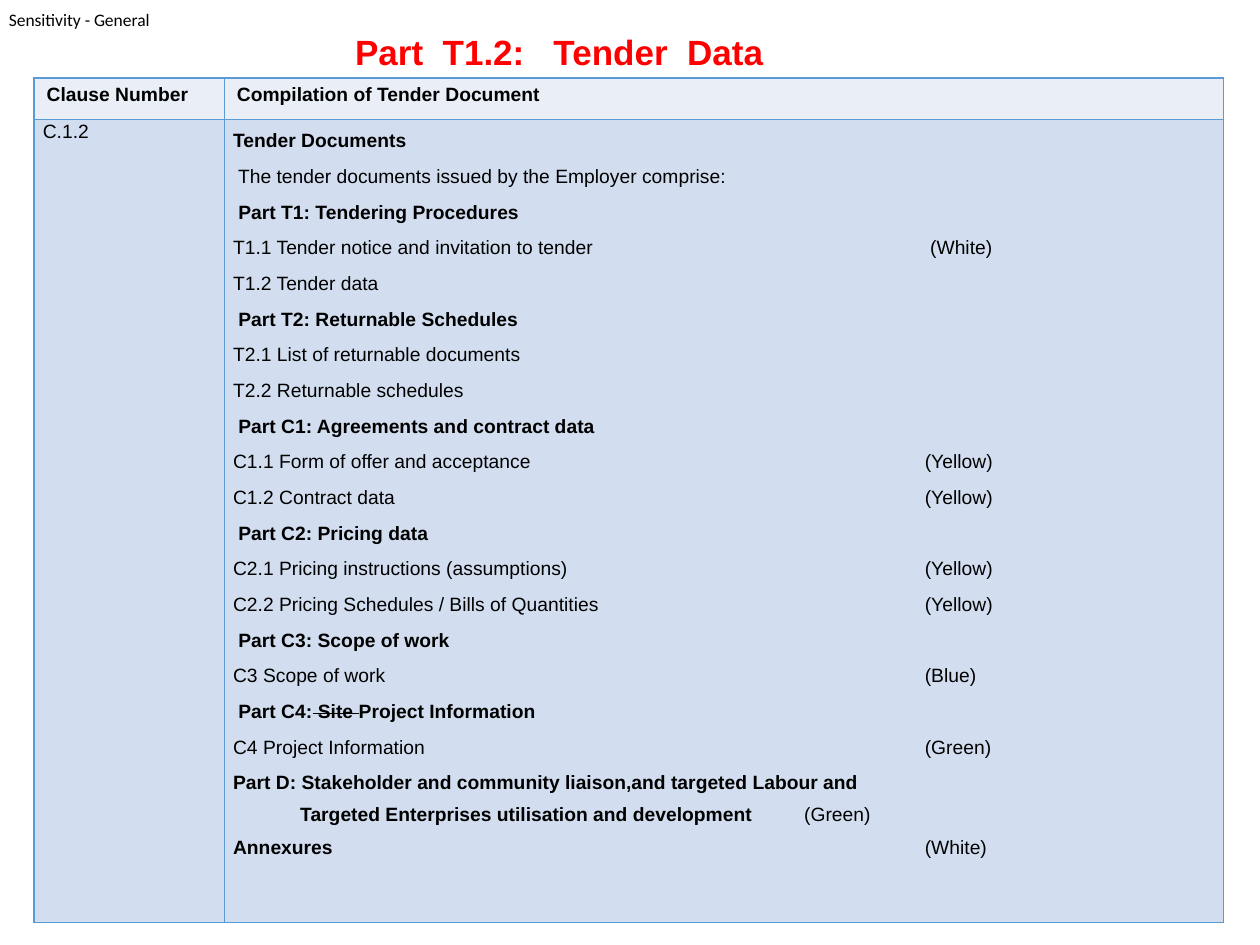
from lxml.etree import SubElement
from pptx import Presentation
from pptx.dml.color import RGBColor
from pptx.enum.text import MSO_ANCHOR, MSO_AUTO_SIZE, PP_ALIGN
from pptx.oxml.ns import qn
from pptx.util import Inches, Pt

COLORS = {
    "text": "000000",
    "title": "FF0000",
    "border": "5B9BD5",
    "header": "EAEFF7",
    "body": "D2DEEF",
}
TAB_POSITION = Inches(5.49)
HEADERS = ["Clause Number", "Compilation of Tender Document"]
HEADING, ITEM = True, False
DOCUMENTS = [
    (HEADING, "Tender Documents"),
    (ITEM, " The tender documents issued by the Employer comprise:"),
    (HEADING, " Part T1: Tendering Procedures"),
    (ITEM, "T1.1 Tender notice and invitation to tender", " (White)"),
    (ITEM, "T1.2 Tender data"),
    (HEADING, " Part T2: Returnable Schedules"),
    (ITEM, "T2.1 List of returnable documents"),
    (ITEM, "T2.2 Returnable schedules"),
    (HEADING, " Part C1: Agreements and contract data"),
    (ITEM, "C1.1 Form of offer and acceptance", "(Yellow)"),
    (ITEM, "C1.2 Contract data", "(Yellow)"),
    (HEADING, " Part C2: Pricing data"),
    (ITEM, "C2.1 Pricing instructions (assumptions)", "(Yellow)"),
    (ITEM, "C2.2 Pricing Schedules / Bills of Quantities", "(Yellow)"),
    (HEADING, " Part C3: Scope of work"),
    (ITEM, "C3 Scope of work", "(Blue)"),
    (HEADING, " Part C4:~ Site ~Project Information"),
    (ITEM, "C4 Project Information", "(Green)"),
    (HEADING, "Part D: Stakeholder and community liaison,and targeted Labour and\v"
              " Targeted Enterprises utilisation and development", " (Green)"),
    (HEADING, "Annexures", "(White)"),
]


def format_font(font, size, bold=False, color="text", name="Arial"):
    """Set the typeface, size, weight and colour of a font."""
    font.name = name
    font.size = Pt(size)
    font.bold = bold
    font.color.rgb = RGBColor.from_string(COLORS[color])


def add_text_run(paragraph, text, bold=False):
    """Append a formatted table run and return it."""
    paragraph.add_line_break() if text == "\v" else None
    run = paragraph.add_run()
    run.text = text
    format_font(run.font, 11, bold)
    return run


def add_sensitivity_label(slide, left, top, width, height):
    """Add the small classification label."""
    frame = slide.shapes.add_textbox(left, top, width, height).text_frame
    frame.margin_left = frame.margin_right = frame.margin_top = frame.margin_bottom = 0
    frame.text = "Sensitivity - General"
    format_font(frame.paragraphs[0].runs[0].font, 10, name="Calibri")


def add_title(slide, left, top, width, height):
    """Place and format the title placeholder."""
    title = slide.shapes.title
    title.left, title.top, title.width, title.height = left, top, width, height
    frame = title.text_frame
    frame.text = "Part  T1.2:   Tender  Data"
    frame.word_wrap = False
    frame.auto_size = MSO_AUTO_SIZE.NONE
    frame.vertical_anchor = MSO_ANCHOR.TOP
    paragraph = frame.paragraphs[0]
    paragraph.alignment = PP_ALIGN.CENTER
    format_font(paragraph.runs[0].font, 20, True, "title")


def style_cell(cell, color):
    """Give a cell its four borders and its fill."""
    properties = cell._tc.get_or_add_tcPr()
    for side in ("lnL", "lnR", "lnT", "lnB"):
        line = SubElement(properties, qn(f"a:{side}"), w=str(Pt(1)))
        fill = SubElement(line, qn("a:solidFill"))
        SubElement(fill, qn("a:srgbClr"), val=COLORS["border"])
    cell.fill.solid()
    cell.fill.fore_color.rgb = RGBColor.from_string(COLORS[color])


def add_document_line(paragraph, is_heading, label, paper=None):
    """Write one document entry, with its paper colour after a tab."""
    paragraph.line_spacing = 1.5
    paragraph.space_after = Pt(2)
    properties = paragraph._p.get_or_add_pPr()
    if paper:
        tabs = SubElement(properties, qn("a:tabLst"))
        SubElement(tabs, qn("a:tab"), pos=str(TAB_POSITION), algn="l")
    if "\v" in label:
        paragraph.space_after = Pt(0)
        properties.set("marL", str(Inches(0.49)))
        properties.set("indent", str(Inches(-0.49)))
    for index, part in enumerate(label.split("~")):
        for line_number, text in enumerate(part.split("\v")):
            if line_number:
                paragraph.add_line_break()
            run = add_text_run(paragraph, text, is_heading)
            if index == 1:
                run._r.get_or_add_rPr().set("strike", "sngStrike")
    if paper:
        add_text_run(paragraph, f"\t{paper}")
    for line_break in paragraph._p.findall(qn("a:br")):
        SubElement(line_break, qn("a:rPr"), sz="1100", b="1")


def add_tender_table(slide, left, top, width, height):
    """Add the clause table with its header and document list."""
    table = slide.shapes.add_table(2, 2, left, top, width, height).table
    table.columns[0].width = Inches(1.51)
    table.columns[1].width = width - Inches(1.51)
    table.rows[0].height = Inches(0.33)
    table.rows[1].height = height - Inches(0.33)
    for column, header in enumerate(HEADERS):
        cell = table.cell(0, column)
        style_cell(cell, "header")
        add_text_run(cell.text_frame.paragraphs[0], header, True)
        cell = table.cell(1, column)
        style_cell(cell, "body")
        cell.margin_left = cell.margin_right = Inches(0.07)
        cell.margin_top = cell.margin_bottom = 0
    clause = table.cell(1, 0).text_frame.paragraphs[0]
    clause.line_spacing = 1.07
    clause.space_after = Pt(8)
    add_text_run(clause, "C.1.2")
    frame = table.cell(1, 1).text_frame
    for index, document in enumerate(DOCUMENTS):
        paragraph = frame.add_paragraph() if index else frame.paragraphs[0]
        add_document_line(paragraph, *document)


def main():
    """Build and save the slide."""
    presentation = Presentation()
    presentation.slide_width = Inches(10)
    presentation.slide_height = Inches(7.5)
    slide = presentation.slides.add_slide(presentation.slide_layouts[5])
    add_sensitivity_label(slide, Inches(0.07), Inches(0.07), Inches(1.15), Inches(0.17))
    add_title(slide, Inches(2.71), Inches(0.19), Inches(3.46), Inches(0.44))
    add_tender_table(slide, Inches(0.27), Inches(0.62), Inches(9.44), Inches(6.7))
    presentation.save("out.pptx")


if __name__ == "__main__":
    main()
